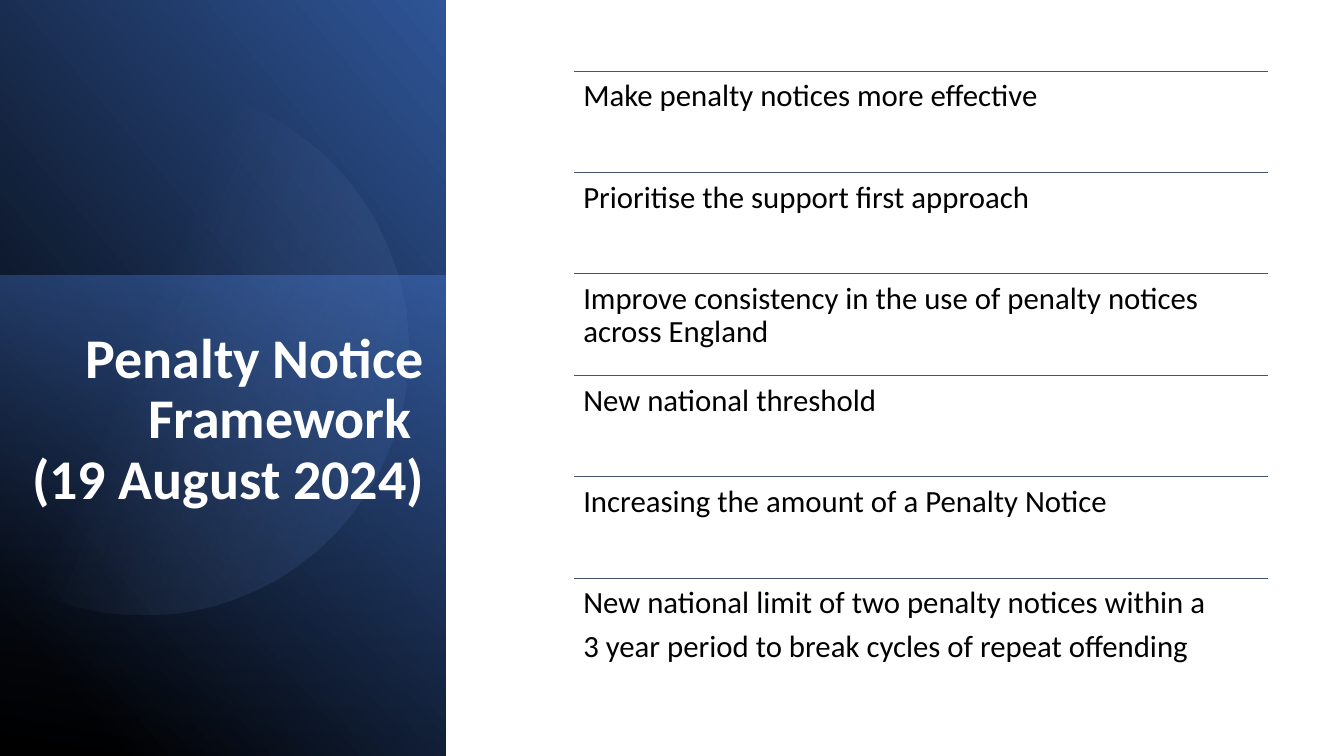
import math

from lxml import etree
from pptx import Presentation, util as u
from pptx.dml.color import RGBColor
from pptx.enum import shapes, text
from pptx.oxml.ns import qn

PX = u.Inches(1) // 100  # one px is a hundredth of an inch

BLACK = RGBColor(0x00, 0x00, 0x00)
WHITE = RGBColor(0xFF, 0xFF, 0xFF)
DEEP_BLUE = RGBColor(0x2F, 0x55, 0x97)
BRIGHT_BLUE = RGBColor(0x44, 0x72, 0xC4)
NAVY = RGBColor(0x20, 0x38, 0x64)
PALE_BLUE = RGBColor(0x8F, 0xAA, 0xDC)
SLATE = RGBColor(0x44, 0x54, 0x6A)
FONT = "Calibri"


def paint_gradient(shape, clockwise_angle, stops):
    """Fill with two stops, each (position %, colour, opacity %)."""
    shape.shadow.inherit = False
    shape.line.fill.background()
    shape.fill.gradient()
    shape.fill.gradient_angle = 360 - clockwise_angle
    for stop, (position, colour, _) in zip(shape.fill.gradient_stops, stops):
        stop.position = position / 100
        stop.color.rgb = colour
    gradient = shape.element.spPr.find(qn("a:gradFill"))
    for node, (_, _, opacity) in zip(gradient.iter(qn("a:srgbClr")), stops):
        if opacity < 100:
            etree.SubElement(node, qn("a:alpha"), val=str(opacity * 1000))


def add_text(parent, left, top, width, height, inset, paragraphs, size, colour,
             bold=False, align=text.PP_ALIGN.LEFT, after=0):
    """Add a text box; each paragraph is a list of lines."""
    box = parent.add_textbox(left * PX, top * PX, width * PX, height * PX)
    frame = box.text_frame
    frame.word_wrap = True
    frame.margin_left = frame.margin_right = inset * PX
    frame.margin_top = frame.margin_bottom = inset * PX
    for index, lines in enumerate(paragraphs):
        para = frame.add_paragraph() if index else frame.paragraphs[0]
        para.alignment = align
        para.line_spacing = 0.9
        para.space_after = u.Pt(after)
        for number, line in enumerate(lines):
            if number:
                para.add_line_break()
            span = para.add_run()
            span.text = line
            span.font.name = FONT
            span.font.size = u.Pt(size)
            span.font.bold = bold
            span.font.color.rgb = colour


deck = Presentation()
deck.slide_width = 2666 * PX
deck.slide_height = 1500 * PX
page = deck.slides.add_slide(deck.slide_layouts[6])

# Blue side panel with a lighter lower part
PANEL_WIDTH = 884
panel = page.shapes.add_shape(
    shapes.MSO_SHAPE.RECTANGLE, 0, 0, PANEL_WIDTH * PX, 1500 * PX)
paint_gradient(panel, 320, [(11, BLACK, 100), (100, DEEP_BLUE, 100)])
lower_panel = page.shapes.add_shape(
    shapes.MSO_SHAPE.RECTANGLE, 0, 547 * PX, PANEL_WIDTH * PX, 953 * PX)
paint_gradient(lower_panel, 100, [(0, BRIGHT_BLUE, 50), (100, NAVY, 0)])

# Translucent disc, cut off at the left edge of the slide
CENTRE_X, CENTRE_Y, RADIUS = 285, 694, 526
STEPS = 120
cut = math.acos(-CENTRE_X / RADIUS)
arc = []
for step in range(STEPS + 1):
    angle = cut * (2 * step / STEPS - 1)
    arc.append((CENTRE_X + RADIUS * math.cos(angle),
                CENTRE_Y + RADIUS * math.sin(angle)))
builder = page.shapes.build_freeform(*arc[0], scale=PX)
builder.add_line_segments(arc[1:], close=True)
disc = builder.convert_to_shape()
paint_gradient(disc, 22, [(39, PALE_BLUE, 0), (100, DEEP_BLUE, 26)])

# Title
add_text(page.shapes, 35, 645, 817, 772, 10,
         [["Penalty Notice Framework ", "(19 August 2024)"]],
         80, WHITE, bold=True, align=text.PP_ALIGN.RIGHT)

# List of changes, each under a thin rule
changes = [
    ["Make penalty notices more effective"],
    ["Prioritise the support first approach"],
    ["Improve consistency in the use of penalty notices across England"],
    ["New national threshold"],
    ["Increasing the amount of a Penalty Notice"],
    ["New national limit of two penalty notices within a",
     "3 year period to break cycles of repeat offending"],
]
LIST_LEFT, LIST_TOP, LIST_WIDTH, LIST_HEIGHT = 1139, 141, 1376, 1208
change_list = page.shapes.add_group_shape().shapes
for row, change in enumerate(changes):
    top = LIST_TOP + LIST_HEIGHT * row // len(changes)
    rule = change_list.add_connector(
        shapes.MSO_CONNECTOR.STRAIGHT, LIST_LEFT * PX, top * PX,
        (LIST_LEFT + LIST_WIDTH) * PX, top * PX)
    rule.line.color.rgb = SLATE
    rule.line.width = u.Pt(1)
    etree.SubElement(rule.element.spPr, qn("a:effectLst"))
    add_text(change_list, LIST_LEFT, top, LIST_WIDTH,
             LIST_HEIGHT // len(changes), 18,
             [[line] for line in change], 44, BLACK, after=15.4)

deck.save("out.pptx")
